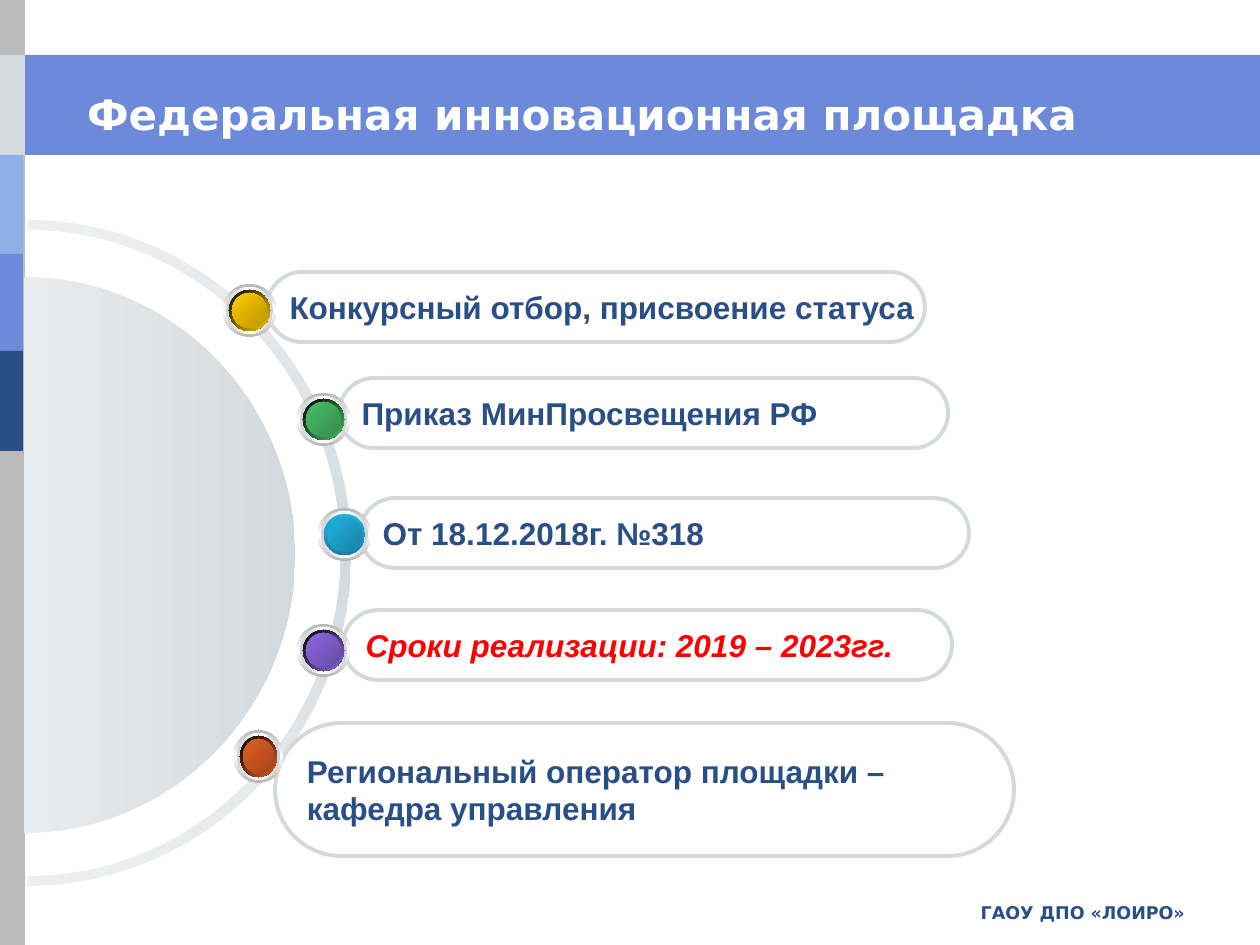
from lxml.etree import SubElement
from pptx import Presentation
from pptx.dml.color import RGBColor
from pptx.enum.shapes import MSO_SHAPE
from pptx.enum.text import MSO_ANCHOR, MSO_AUTO_SIZE, PP_ALIGN
from pptx.oxml.ns import qn
from pptx.util import Pt

SCALE = 914400 / 126
NAVY, BLUE, SILVER, WHITE, RED = "2A4F86", "6C89DA", "D3D9DD", "FFFFFF", "FF0000"
PALE, TEAL, DARK_TEAL = "ECEFF0", "57ABA3", "43837D"
CURVE = 0.55


def px(length):
    return round(length * SCALE)


def color(code):
    return RGBColor.from_string(code)


def half_ellipse(left, middle, radius_x, radius_y):
    right, top, bottom = left + radius_x, middle - radius_y, middle + radius_y
    reach_x, reach_y = radius_x * CURVE, radius_y * CURVE
    return [
        (left, top), (left + reach_x, top), (right, middle - reach_y),
        (right, middle), (right, middle + reach_y), (left + reach_x, bottom),
        (left, bottom),
    ]


class SlideBuilder:
    heading_font = "DejaVu Sans"
    body_font = "Arial"

    def __init__(self, slide):
        self.slide = slide
        self.shapes = slide.shapes

    def gradient(self, shape, colors, angle):
        shape.fill.gradient()
        shape.fill.gradient_angle = (360 - angle) % 360
        stops = shape._element.spPr.find(qn("a:gradFill")).find(qn("a:gsLst"))
        for stop in list(stops):
            stops.remove(stop)
        for index, code in enumerate(colors):
            position = 100000 * index // (len(colors) - 1)
            stop = SubElement(stops, qn("a:gs"), pos=str(position))
            SubElement(stop, qn("a:srgbClr"), val=code)

    def span(self, para, text, size, font, code, italic=False):
        span = para.add_run()
        span.text = text
        span.font.name = font
        span.font.size = Pt(size)
        span.font.bold = True
        span.font.italic = italic
        span.font.color.rgb = color(code)

    def bar(self, left, top, width, height, code):
        bar = self.shapes.add_shape(MSO_SHAPE.RECTANGLE, px(left), px(top), px(width), px(height))
        bar.shadow.inherit = False
        bar.fill.solid()
        bar.fill.fore_color.rgb = color(code)
        bar.line.fill.background()

    def title(self, left, top, width, height, text):
        box = self.shapes.title
        self.shapes._spTree.append(box._element)
        box.left, box.top, box.width, box.height = px(left), px(top), px(width), px(height)
        frame = box.text_frame
        frame.auto_size = MSO_AUTO_SIZE.NONE
        frame.vertical_anchor = MSO_ANCHOR.MIDDLE
        frame.margin_left = frame.margin_right = 0
        para = frame.paragraphs[0]
        para.alignment = PP_ALIGN.CENTER
        self.span(para, text, 24, self.heading_font, WHITE)

    def footer(self, left, top, width, height, text):
        box = self.shapes.add_textbox(px(left), px(top), px(width), px(height))
        box.text_frame.word_wrap = True
        box.text_frame.vertical_anchor = MSO_ANCHOR.MIDDLE
        para = box.text_frame.paragraphs[0]
        para.alignment = PP_ALIGN.RIGHT
        self.span(para, text, 10, self.heading_font, NAVY)

    def curved(self, halves, colors, angle):
        start, *rest = [(px(x), px(y)) for half in halves for x, y in half]
        builder = self.shapes.build_freeform(*start)
        builder.add_line_segments(rest, close=True)
        shape = builder.convert_to_shape()
        shape.shadow.inherit = False
        lines = list(shape._element.spPr.iter(qn("a:lnTo")))
        for half in range(len(halves)):
            for first in (7 * half, 7 * half + 3):
                curve, *others = lines[first:first + 3]
                bezier = SubElement(curve.getparent(), qn("a:cubicBezTo"))
                curve.addprevious(bezier)
                for line in [curve, *others]:
                    bezier.append(line[0])
                    line.getparent().remove(line)
        self.gradient(shape, colors, angle)
        shape.line.fill.background()

    def pill(self, left, top, width, height, lines, code=NAVY, italic=False):
        box = self.shapes.add_shape(
            MSO_SHAPE.ROUNDED_RECTANGLE, px(left), px(top), px(width), px(height))
        box.adjustments[0] = 0.5
        box.shadow.inherit = False
        box.fill.background()
        box.line.color.rgb = color(SILVER)
        box.line.width = Pt(2.25)
        frame = box.text_frame
        frame.word_wrap = False
        frame.vertical_anchor = MSO_ANCHOR.MIDDLE
        for index, text in enumerate(lines):
            para = frame.add_paragraph() if index else frame.paragraphs[0]
            para.alignment = PP_ALIGN.LEFT
            self.span(para, text, 18, self.body_font, code, italic)

    def button(self, left, top, width, light, dark, rim="000000", rim_end=None, rim_angle=45):
        layers = [
            (0, ["B6B6B6", WHITE, "B6B6B6"], 90),
            (3, ["D1D1D1", WHITE, "D1D1D1"], 0),
            (6, [WHITE, TEAL, WHITE], 45),
            (6, [rim, rim_end or light], rim_angle),
            (9, [DARK_TEAL, TEAL, DARK_TEAL], 315),
            (9, [light, dark], 45),
        ]
        group = self.shapes.add_group_shape()
        for inset, colors, angle in layers:
            disc = group.shapes.add_shape(
                MSO_SHAPE.OVAL, px(left + inset), px(top + inset),
                px(width - 2 * inset), px(53 - 2 * inset))
            disc.shadow.inherit = False
            self.gradient(disc, colors, angle)
            disc.line.fill.background()


def main():
    deck = Presentation()
    deck.slide_width, deck.slide_height = px(1260), px(945)
    page = SlideBuilder(deck.slides.add_slide(deck.slide_layouts[5]))

    page.bar(0, 55, 1260, 100, BLUE)
    page.bar(0, 0, 25, 945, "BABABA")
    page.bar(0, 55, 25, 100, SILVER)
    for top, code in [(155, "8FAFE9"), (254, BLUE), (351, NAVY)]:
        page.bar(0, top, 23, 100, code)
    page.footer(798, 896, 399, 32, "ГАОУ ДПО «ЛОИРО»")
    page.title(73, 49, 1018, 129, "Федеральная инновационная площадка")

    inner = half_ellipse(28, 553, 313, 323)
    outer = half_ellipse(28, 553, 323, 333)
    page.curved([inner, outer[::-1]], [PALE, SILVER, PALE], 90)
    page.curved([half_ellipse(24, 555, 271, 278)], ["E9ECEE", SILVER], 0)

    page.pill(275, 723, 739, 133, ["Региональный оператор площадки –", "кафедра управления"])
    page.pill(343, 610, 609, 70, ["Сроки реализации: 2019 – 2023гг."], RED, True)
    page.pill(360, 498, 609, 70, ["От 18.12.2018г. №318"])
    page.pill(339, 378, 609, 70, ["Приказ МинПросвещения РФ"])
    page.pill(267, 272, 658, 70, ["Конкурсный отбор, присвоение статуса"])

    page.button(223, 284, 53, "FFCC00", "BA9500")
    page.button(297, 393, 53, "48BE67", "358B4B")
    page.button(318, 508, 53, "21B3E1", "1883A4", "21B3E1", "1880A1", 90)
    page.button(297, 624, 53, "8D67E1", "674BA4")
    page.button(234, 730, 49, "E35E23", "A6451A")

    deck.save("out.pptx")


if __name__ == "__main__":
    main()
